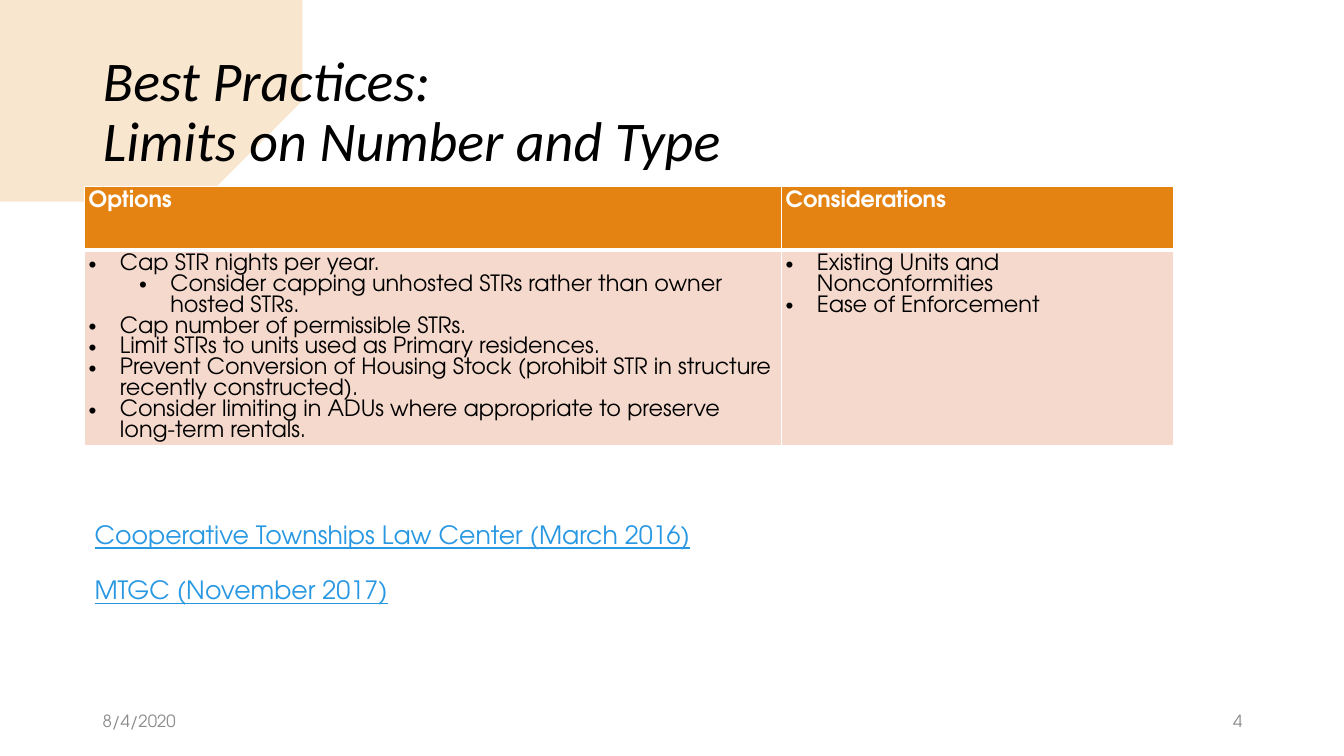
from lxml.etree import SubElement
from pptx import Presentation
from pptx.dml.color import RGBColor
from pptx.enum.text import MSO_ANCHOR, MSO_AUTO_SIZE, PP_ALIGN
from pptx.oxml.ns import qn
from pptx.util import Inches, Pt

FONT = "TeX Gyre Adventor"
ORANGE, PINK, WHITE, BLACK = "E48312", "F5D9CC", "FFFFFF", "000000"
GREY, LINK_BLUE = "8C8C8C", "2998E3"
LINE_PITCH = Pt(14.9)

BRUSH_OUTLINE = [
    (0, 0.34), (0.66, 0.38), (1.51, 0.38), (2.48, 0.41), (2.8, 0.47),
    (2.53, 0.57), (2.62, 0.62), (2.38, 0.66), (2.75, 0.74), (2.51, 0.75),
    (2.9, 0.85), (2.63, 0.88), (3.3, 0.94), (3.18, 1.06), (2.8, 1.2),
    (2.74, 1.28), (3.08, 1.28), (2.69, 1.38), (2.63, 1.48), (1.97, 1.72),
    (1.02, 1.88), (0.65, 1.91), (0, 1.88),
]

OPTIONS = [
    (0, "Cap STR nights per year."),
    (1, "Consider capping unhosted STRs rather than owner hosted STRs."),
    (0, "Cap number of permissible STRs."),
    (0, "Limit STRs to units used as Primary residences."),
    (0, "Prevent Conversion of Housing Stock (prohibit STR in structure recently constructed)."),
    (0, "Consider limiting in ADUs where appropriate to preserve long-term rentals."),
]
CONSIDERATIONS = [(0, "Existing Units and Nonconformities"), (0, "Ease of Enforcement")]


def color(value):
    return RGBColor.from_string(value)


def write(para, text, size=16, font=FONT, ink=BLACK, bold=False, italic=False,
          underline=False, align=PP_ALIGN.LEFT, spacing=None):
    para.text = text
    para.alignment = align
    para.line_spacing = spacing
    for span in para.runs:
        style = span.font
        style.size, style.name = Pt(size), font
        style.bold, style.italic, style.underline = bold, italic, underline
        style.color.rgb = color(ink)


def place(shape, box):
    shape.left, shape.top, shape.width, shape.height = map(Inches, box)


def add_brush_stroke(page):
    start, *others = BRUSH_OUTLINE
    builder = page.shapes.build_freeform(*start, scale=Inches(1))
    builder.add_line_segments(others, close=True)
    brush = builder.convert_to_shape()
    brush.shadow.inherit = False
    brush.line.fill.background()
    brush.fill.solid()
    brush.fill.fore_color.rgb = color(ORANGE)
    tint = next(brush.element.spPr.iter(qn("a:srgbClr")))
    SubElement(tint, qn("a:alpha"), val="20000")
    page.shapes.element.insert(2, brush.element)  # behind the title


def add_title(page, box):
    title = page.shapes.title
    place(title, box)
    frame = title.text_frame
    frame.auto_size = MSO_AUTO_SIZE.NONE
    frame.vertical_anchor = MSO_ANCHOR.MIDDLE
    write(frame.paragraphs[0], "Best Practices: \vLimits on Number and Type",
          size=40, font="Calibri", italic=True, spacing=0.9)


def add_label(page, box, text, anchor=MSO_ANCHOR.TOP, **style):
    label = page.shapes.add_textbox(*map(Inches, box))
    label.text_frame.word_wrap = True
    label.text_frame.vertical_anchor = anchor
    write(label.text_frame.paragraphs[0], text, **style)


def add_bullet(para, level):
    para.level = level
    properties = para._p.get_or_add_pPr()
    properties.set("marL", str(Inches(0.31 + 0.5 * level)))
    properties.set("indent", str(-Inches(0.31)))
    SubElement(properties, qn("a:buFont"), typeface="Arial")
    SubElement(properties, qn("a:buChar"), char="•")


def format_cell(cell, fill, **border_widths):
    cell.margin_left = cell.margin_right = Inches(0.04)
    cell.margin_top = cell.margin_bottom = Inches(0.04)
    properties = cell._tc.get_or_add_tcPr()
    for side in "LRTB":
        line = SubElement(properties, qn(f"a:ln{side}"), w=str(Pt(border_widths.get(side, 1))))
        SubElement(SubElement(line, qn("a:solidFill")), qn("a:srgbClr"), val=WHITE)
    cell.fill.solid()
    cell.fill.fore_color.rgb = color(fill)


def add_options_table(page, box):
    width, height = box[2:]
    table = page.shapes.add_table(2, 2, *map(Inches, box)).table
    head_height = 0.63
    table.rows[0].height = Inches(head_height)
    table.rows[1].height = Inches(height - head_height)
    columns = [("Options", OPTIONS, 0.64), ("Considerations", CONSIDERATIONS, 0.36)]
    for index, (heading, items, share) in enumerate(columns):
        table.columns[index].width = Inches(width * share)
        head, body = table.cell(0, index), table.cell(1, index)
        format_cell(head, ORANGE, B=3)
        write(head.text_frame.paragraphs[0], heading, ink=WHITE, bold=True, spacing=LINE_PITCH)
        format_cell(body, PINK, T=3)
        frame = body.text_frame
        for number, (level, text) in enumerate(items):
            para = frame.add_paragraph() if number else frame.paragraphs[0]
            write(para, text, spacing=LINE_PITCH)
            add_bullet(para, level)


def add_sources(page, box):
    left, top, width, height = box
    sources = ["Cooperative Townships Law Center (March 2016)", "MTGC (November 2017)"]
    for row, text in enumerate(sources):
        add_label(page, (left, top + 0.55 * row, width, height), text,
                  size=18, ink=LINK_BLUE, underline=True)


def add_footer(page, box):
    for text, align in (("8/4/2020", PP_ALIGN.LEFT), ("4", PP_ALIGN.RIGHT)):
        left, top, width, height = box
        part = 3
        if align == PP_ALIGN.RIGHT:
            left += width - part
        add_label(page, (left, top, part, height), text, anchor=MSO_ANCHOR.MIDDLE,
                  size=12, ink=GREY, align=align)


def main():
    deck = Presentation()
    deck.slide_width, deck.slide_height = Inches(13.33), Inches(7.5)
    page = deck.slides.add_slide(deck.slide_layouts[5])
    add_brush_stroke(page)
    add_title(page, (0.92, 0.4, 11.5, 1.45))
    add_options_table(page, (0.84, 1.85, 10.8, 2.56))
    add_sources(page, (0.84, 5.1, 6.67, 0.4))
    add_footer(page, (0.92, 6.95, 11.5, 0.4))
    deck.save("out.pptx")


if __name__ == "__main__":
    main()
